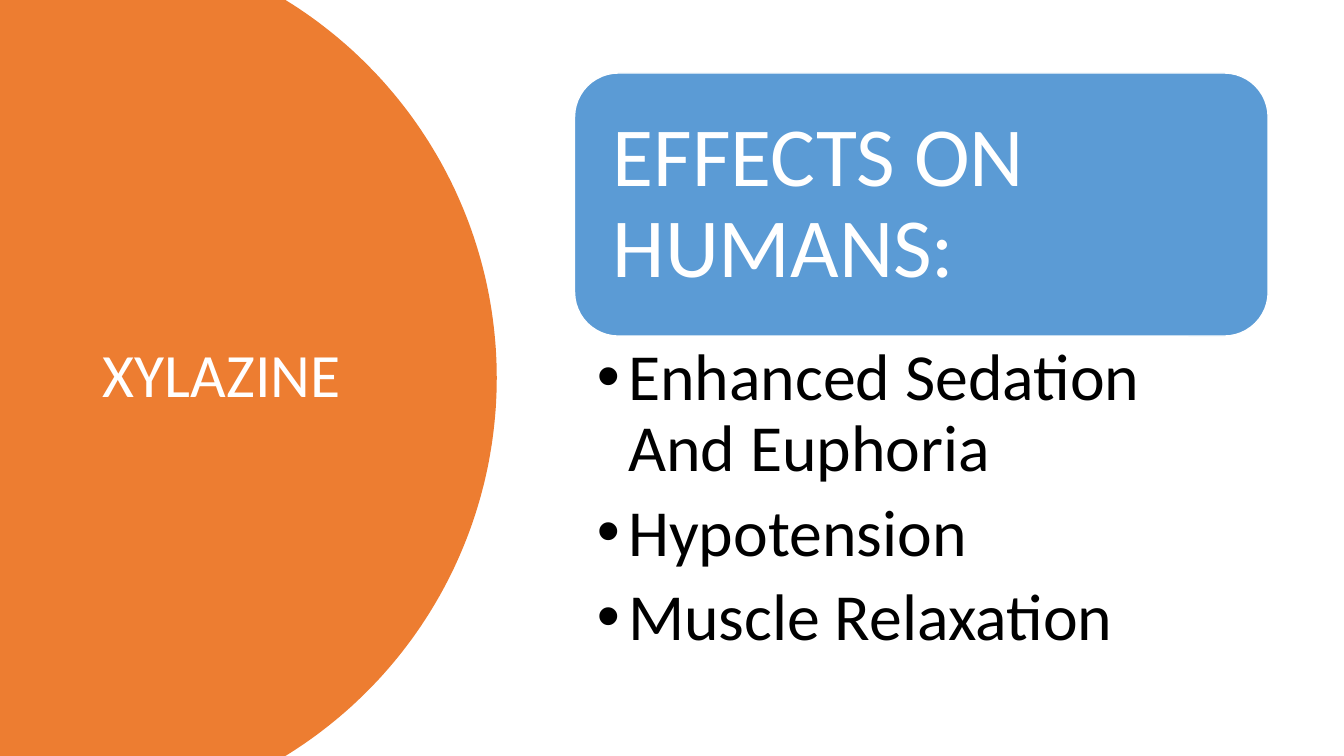
from dataclasses import dataclass
from math import asin, cos, sin

from lxml.etree import SubElement
from pptx import Presentation
from pptx.dml.color import RGBColor
from pptx.enum.shapes import MSO_SHAPE as Shape
from pptx.enum.text import MSO_ANCHOR as Anchor, MSO_AUTO_SIZE as AutoSize, PP_ALIGN as Align
from pptx.oxml.ns import qn
from pptx.util import Cm, Pt


@dataclass(frozen=True)
class Theme:
    """Colours, font and type sizes of the deck."""
    orange: RGBColor = RGBColor(0xED, 0x7D, 0x31)
    blue: RGBColor = RGBColor(0x5B, 0x9B, 0xD5)
    white: RGBColor = RGBColor(0xFF, 0xFF, 0xFF)
    black: RGBColor = RGBColor(0, 0, 0)
    font: str = "Calibri"
    title: int = 44
    heading: int = 60
    bullet: int = 47


@dataclass(frozen=True)
class Box:
    """A rectangle in centimetres."""
    left: float
    top: float
    width: float
    height: float

    def lengths(self):
        """Return left, top, width and height as lengths."""
        return Cm(self.left), Cm(self.top), Cm(self.width), Cm(self.height)


THEME = Theme()
PAGE = Box(0, 0, 33.87, 19.05)


def write(frame, lines, size, color, margins=(0.25, 0.13, 0.25, 0.13),
          anchor=Anchor.MIDDLE, after=0, hang=0):
    """Fill a text frame with left-aligned lines, bulleted when hang is set."""
    frame.word_wrap = True
    frame.auto_size = AutoSize.NONE
    frame.vertical_anchor = anchor
    (frame.margin_left, frame.margin_top,
     frame.margin_right, frame.margin_bottom) = map(Cm, margins)
    for index, line in enumerate(lines):
        para = frame.add_paragraph() if index else frame.paragraphs[0]
        para.alignment = Align.LEFT
        para.line_spacing = 0.9
        para.space_after = Pt(after)
        if hang:
            properties = para._p.get_or_add_pPr()
            properties.set("marL", str(Cm(hang)))
            properties.set("indent", str(-Cm(hang)))
            SubElement(properties, qn("a:buFont")).set("typeface", "Arial")
            SubElement(properties, qn("a:buChar")).set("char", "•")
        span = para.add_run()
        span.text = line
        span.font.name = THEME.font
        span.font.size = Pt(size)
        span.font.color.rgb = color


def add_title_panel(page, box, title, radius=11.18, steps=120):
    """Draw a panel with a circular right edge and set the title on it."""
    middle = box.top + box.height / 2
    center = box.left + box.width - radius
    sweep = asin(box.height / 2 / radius)
    angles = [sweep * (2 * step / steps - 1) for step in range(steps + 1)]
    arc = [(Cm(center + radius * cos(angle)), Cm(middle + radius * sin(angle)))
           for angle in angles]
    left, top, _, height = box.lengths()
    builder = page.shapes.build_freeform(left, top)
    builder.add_line_segments(arc + [(left, top + height)], close=True)
    panel = builder.convert_to_shape()
    panel.shadow.inherit = False
    panel.fill.solid()
    panel.fill.fore_color.rgb = THEME.orange
    panel.line.fill.background()

    heading = page.shapes.title
    heading.left, heading.top, heading.width, heading.height = Box(
        box.left + 2.34, box.top + 1.78, 8.2, 15.47).lengths()
    write(heading.text_frame, [title], THEME.title, THEME.white)
    panel.element.addnext(heading.element)


def add_effects(page, box, heading, effects, header_height=6.63):
    """Stack a rounded heading above a bulleted list."""
    header = Box(box.left, box.top, box.width, header_height)
    card = page.shapes.add_shape(Shape.ROUNDED_RECTANGLE, *header.lengths())
    card.shadow.inherit = False
    card.fill.solid()
    card.fill.fore_color.rgb = THEME.blue
    card.line.color.rgb = THEME.white
    card.line.width = Pt(1)
    write(card.text_frame, [heading], THEME.heading, THEME.white, margins=[0.64] * 4)

    body = Box(box.left, box.top + header_height, box.width, box.height - header_height)
    listing = page.shapes.add_textbox(*body.lengths())
    write(listing.text_frame, effects, THEME.bullet, THEME.black,
          margins=(0.56, 0.2, 1.19, 0.2), anchor=Anchor.TOP,
          after=0.2 * THEME.bullet, hang=0.79)


def main():
    """Build and save the deck."""
    deck = Presentation()
    _, _, deck.slide_width, deck.slide_height = PAGE.lengths()
    page = deck.slides.add_slide(deck.slide_layouts.get_by_name("Title Only"))
    add_title_panel(page, Box(0, 0, 12.52, PAGE.height), "XYLAZINE")
    add_effects(page, Box(14.48, 1.84, 17.48, 15.27), "EFFECTS ON HUMANS:",
                ["Enhanced Sedation And Euphoria", "Hypotension", "Muscle Relaxation"])
    deck.save("out.pptx")


if __name__ == "__main__":
    main()
